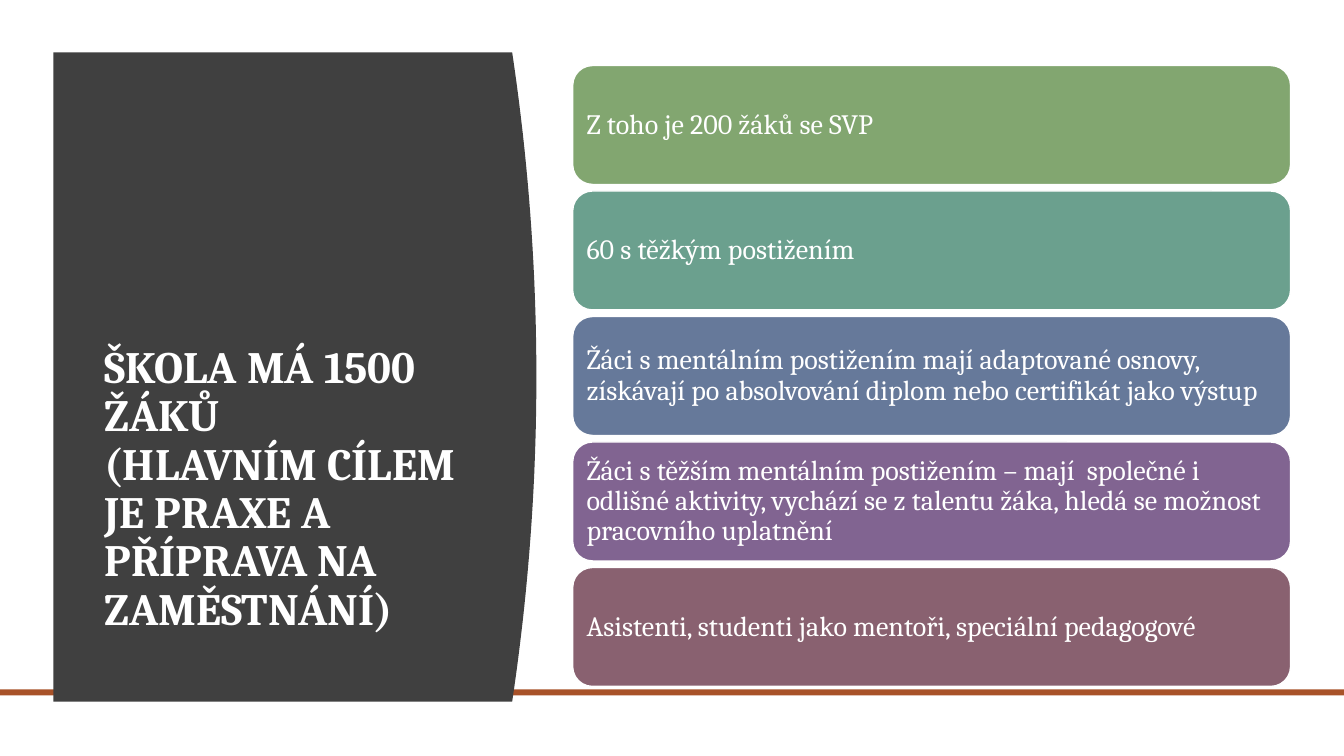
from pptx import Presentation
from pptx.dml.color import RGBColor
from pptx.enum.shapes import MSO_SHAPE
from pptx.enum.text import MSO_ANCHOR, PP_ALIGN
from pptx.util import Inches, Pt

CARDS = [
    ("Z toho je 200 žáků se SVP", "82A670"),
    ("60 s těžkým postižením", "6BA08E"),
    ("Žáci s mentálním postižením mají adaptované osnovy, získávají po "
     "absolvování diplom nebo certifikát jako výstup", "66799A"),
    ("Žáci s těžším mentálním postižením – mají  společné i odlišné aktivity, "
     "vychází se z talentu žáka, hledá se možnost pracovního uplatnění", "816491"),
    ("Asistenti, studenti jako mentoři, speciální pedagogové", "896170"),
]
TITLE = "ŠKOLA MÁ 1500 ŽÁKŮ\n(HLAVNÍM CÍLEM JE PRAXE A PŘÍPRAVA NA ZAMĚSTNÁNÍ)"


def rgb(value):
    return RGBColor.from_string(value)


def write(sp, text, font="Cambria", size=20, color="FFFFFF", bold=False,
          anchor=MSO_ANCHOR.MIDDLE, inset=(0.08, 0.08)):
    tf = sp.text_frame
    tf.word_wrap = True
    tf.vertical_anchor = anchor
    tf.margin_left = tf.margin_right = Inches(inset[0])
    tf.margin_top = tf.margin_bottom = Inches(inset[1])
    p = tf.paragraphs[0]
    p.alignment = PP_ALIGN.LEFT
    p.line_spacing = 0.9
    p.text = text
    for r in p.runs:
        r.font.name = font
        r.font.size = Pt(size)
        r.font.bold = bold
        r.font.color.rgb = rgb(color)


class Deck:
    white = "FFFFFF"
    accent = "A85229"
    dark = "404040"

    def __init__(self, prs):
        self.s = prs.slides.add_slide(prs.slide_layouts[6])

    def paint(self, sp, fill, line=None):
        sp.shadow.inherit = False
        sp.fill.solid()
        sp.fill.fore_color.rgb = rgb(fill)
        if line:
            sp.line.color.rgb = rgb(line)
            sp.line.width = Pt(1)
        else:
            sp.line.fill.background()
        return sp

    def box(self, kind, x, y, w, h, fill, line=None):
        sp = self.s.shapes.add_shape(kind, Inches(x), Inches(y), Inches(w), Inches(h))
        return self.paint(sp, fill, line)

    def bar(self, y, w, h):
        self.box(MSO_SHAPE.RECTANGLE, 0, y, w, h, self.accent)

    def curved_panel(self, x, y, w, h, bulge, steps=40):
        edge = []
        for i in range(steps + 1):
            t = i / steps
            right = x + w - bulge * (2 * t - 1) ** 2
            edge.append((Inches(right), Inches(y + h * t)))
        builder = self.s.shapes.build_freeform(Inches(x), Inches(y), scale=1.0)
        builder.add_line_segments(edge + [(Inches(x), Inches(y + h))], close=True)
        self.paint(builder.convert_to_shape(), self.dark)

    def title(self, text, x, y, w, h):
        sp = self.s.shapes.add_textbox(Inches(x), Inches(y), Inches(w), Inches(h))
        write(sp, text, size=32, bold=True, anchor=MSO_ANCHOR.BOTTOM, inset=(0.1, 0.05))

    def card(self, text, fill, x, y, w, h):
        sp = self.box(MSO_SHAPE.ROUNDED_RECTANGLE, x, y, w, h, fill, self.white)
        write(sp, text)


def main():
    prs = Presentation()
    prs.slide_width = Inches(13.33)
    prs.slide_height = Inches(7.5)
    deck = Deck(prs)
    deck.bar(6.84, 13.33, 0.06)
    deck.curved_panel(0.53, 0.52, 4.79, 6.44, bulge=0.24)
    deck.title(TITLE, 0.94, 1.11, 3.74, 5.24)
    top, pitch = 0.65, 1.245
    for i, (text, fill) in enumerate(CARDS):
        deck.card(text, fill, 5.68, top + i * pitch, 7.12, 1.18)
    prs.save("out.pptx")


if __name__ == "__main__":
    main()
